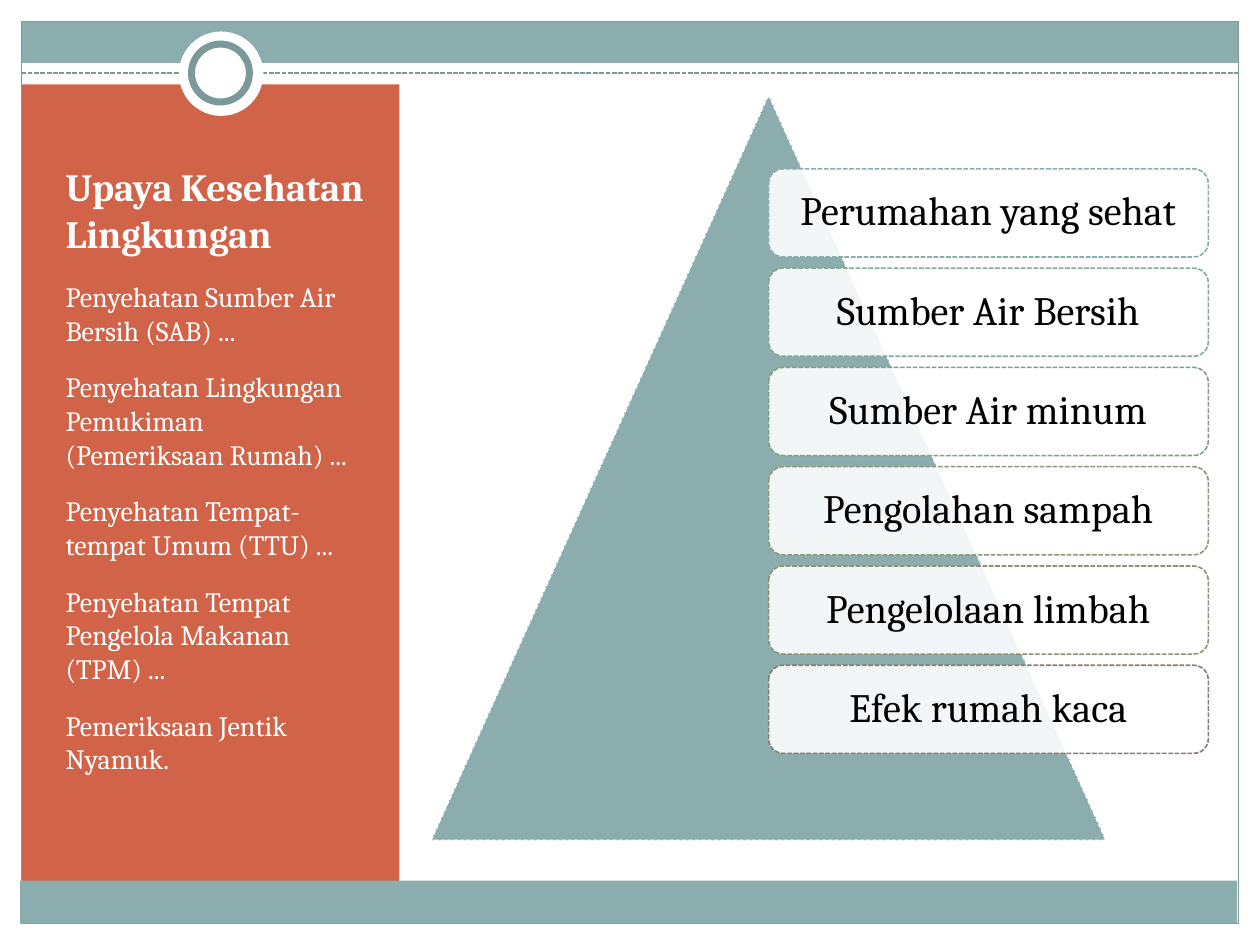
"""Build the environmental health slide with a sidebar and a pyramid list."""
from dataclasses import dataclass
from typing import Optional

from lxml.etree import SubElement
from pptx import Presentation
from pptx.dml.color import RGBColor
from pptx.enum.dml import MSO_LINE
from pptx.enum.shapes import MSO_CONNECTOR, MSO_SHAPE
from pptx.enum.text import MSO_ANCHOR, MSO_AUTO_SIZE, PP_ALIGN
from pptx.oxml.ns import qn
from pptx.util import Inches, Pt

COLORS = {
    "white": "FFFFFF", "black": "000000", "teal": "8CADAE",
    "slate": "7C999A", "rust": "D16349", "sage": "86A897",
    "green": "81A180", "moss": "8C9A7B", "olive": "939175", "taupe": "8C7B70",
}
FONT = "Cambria"
TITLE = "Upaya Kesehatan Lingkungan"
EFFORTS = [
    "Penyehatan Sumber Air Bersih (SAB) ...",
    "Penyehatan Lingkungan Pemukiman (Pemeriksaan Rumah) ...",
    "Penyehatan Tempat-tempat Umum (TTU) ...",
    "Penyehatan Tempat Pengelola Makanan (TPM) ...",
    "Pemeriksaan Jentik Nyamuk.",
]
TOPICS = [
    ("Perumahan yang sehat", "teal"),
    ("Sumber Air Bersih", "sage"),
    ("Sumber Air minum", "green"),
    ("Pengolahan sampah", "moss"),
    ("Pengelolaan limbah", "olive"),
    ("Efek rumah kaca", "taupe"),
]
TOPIC_TOP, TOPIC_PITCH = 1.34, (5.28 - 1.34) / 5


@dataclass(frozen=True)
class Panel:
    """A preset shape with its place in inches and its colours."""
    preset: MSO_SHAPE
    left: float
    top: float
    width: float
    height: float
    fill: Optional[str] = None
    line: Optional[str] = None
    weight: float = 0.9
    dashed: bool = False
    opacity: int = 100


DECORATION = [
    Panel(MSO_SHAPE.RECTANGLE, 0.17, 0.17, 9.66, 0.33, "teal"),
    Panel(MSO_SHAPE.RECTANGLE, 0.17, 0.67, 3, 6.42, "rust"),
    Panel(MSO_SHAPE.RECTANGLE, 0.17, 0.17, 9.66, 7.16, None, "slate", 0.75),
]
RING = [
    Panel(MSO_SHAPE.OVAL, 1.42, 0.25, 0.67, 0.67, "white"),
    Panel(MSO_SHAPE.OVAL, 1.52, 0.35, 0.46, 0.46, "white", "slate", 4),
    Panel(MSO_SHAPE.RECTANGLE, 0.16, 6.99, 9.66, 0.34, "teal"),
]
PYRAMID = Panel(MSO_SHAPE.ISOSCELES_TRIANGLE, 3.42, 0.75, 5.36, 5.92,
                "teal", "white", dashed=True)


def rgb(name: str) -> RGBColor:
    """Return the named colour."""
    return RGBColor.from_string(COLORS[name])


def style_line(line, color: str, weight: float, dashed: bool) -> None:
    """Give an outline its colour, width and dash."""
    line.color.rgb = rgb(color)
    line.width = Pt(weight)
    if dashed:
        line.dash_style = MSO_LINE.SQUARE_DOT


def draw_panel(slide, panel: Panel):
    """Draw one panel and return its shape."""
    shape = slide.shapes.add_shape(
        panel.preset, Inches(panel.left), Inches(panel.top),
        Inches(panel.width), Inches(panel.height))
    shape.shadow.inherit = False
    if panel.fill:
        shape.fill.solid()
        shape.fill.fore_color.rgb = rgb(panel.fill)
    else:
        shape.fill.background()
    if panel.opacity < 100:
        tint = shape.element.spPr.find(qn("a:solidFill"))[0]
        SubElement(tint, qn("a:alpha")).set("val", str(panel.opacity * 1000))
    if panel.line:
        style_line(shape.line, panel.line, panel.weight, panel.dashed)
    else:
        shape.line.fill.background()
    return shape


def draw_dashed_rule(slide) -> None:
    """Draw the dashed rule below the top band."""
    rule = slide.shapes.add_connector(
        MSO_CONNECTOR.STRAIGHT, Inches(0.17), Inches(0.58), Inches(9.83), Inches(0.58))
    style_line(rule.line, "slate", 0.9, True)
    SubElement(rule.element.spPr, qn("a:effectLst"))


def write_text(shape, lines: list[str], *, size: float, color: str = "white",
               bold: bool = False, align: PP_ALIGN = PP_ALIGN.LEFT,
               anchor: MSO_ANCHOR = MSO_ANCHOR.TOP, before: float = 0,
               after: float = 0, spacing: float = 1.0, inset_y: float = 0.05) -> None:
    """Fill a shape with unbulleted paragraphs in one format."""
    frame = shape.text_frame
    frame.text = "\n".join(lines)
    frame.word_wrap = True
    frame.auto_size = MSO_AUTO_SIZE.NONE
    frame.vertical_anchor = anchor
    frame.margin_left = frame.margin_right = Inches(0.1)
    frame.margin_top = frame.margin_bottom = Inches(inset_y)
    for paragraph in frame.paragraphs:
        paragraph.alignment = align
        paragraph.space_before, paragraph.space_after = Pt(before), Pt(after)
        paragraph.line_spacing = spacing
        properties = paragraph._p.get_or_add_pPr()
        properties.set("marL", "0")
        properties.set("indent", "0")
        SubElement(properties, qn("a:buNone"))
        for run in paragraph.runs:
            run.font.name, run.font.size, run.font.bold = FONT, Pt(size), bold
            run.font.color.rgb = rgb(color)


def place_in_front(slide, placeholder, top: float, height: float) -> None:
    """Move a placeholder into the sidebar, above the shapes drawn so far."""
    placeholder.left, placeholder.top = Inches(0.42), Inches(top)
    placeholder.width, placeholder.height = Inches(2.58), Inches(height)
    slide.shapes.element.append(placeholder.element)


def main() -> None:
    """Build and save the slide."""
    deck = Presentation()
    deck.slide_width, deck.slide_height = Inches(10), Inches(7.5)
    slide = deck.slides.add_slide(deck.slide_layouts[1])
    title, efforts = slide.placeholders

    for panel in DECORATION:
        draw_panel(slide, panel)
    draw_dashed_rule(slide)
    for panel in RING:
        draw_panel(slide, panel)

    place_in_front(slide, title, 1, 1.08)
    write_text(title, [TITLE], size=22, bold=True, anchor=MSO_ANCHOR.BOTTOM)
    place_in_front(slide, efforts, 2.17, 4.53)
    write_text(efforts, EFFORTS, size=16, before=3.2, after=10)

    draw_panel(slide, PYRAMID)
    for index, (topic, outline) in enumerate(TOPICS):
        card = draw_panel(slide, Panel(
            MSO_SHAPE.ROUNDED_RECTANGLE, 6.1, TOPIC_TOP + index * TOPIC_PITCH,
            3.49, 0.7, "white", outline, dashed=True, opacity=90))
        write_text(card, [topic], size=23, color="black", align=PP_ALIGN.CENTER,
                   anchor=MSO_ANCHOR.MIDDLE, spacing=0.9, inset_y=0.1)

    deck.save("out.pptx")


if __name__ == "__main__":
    main()
